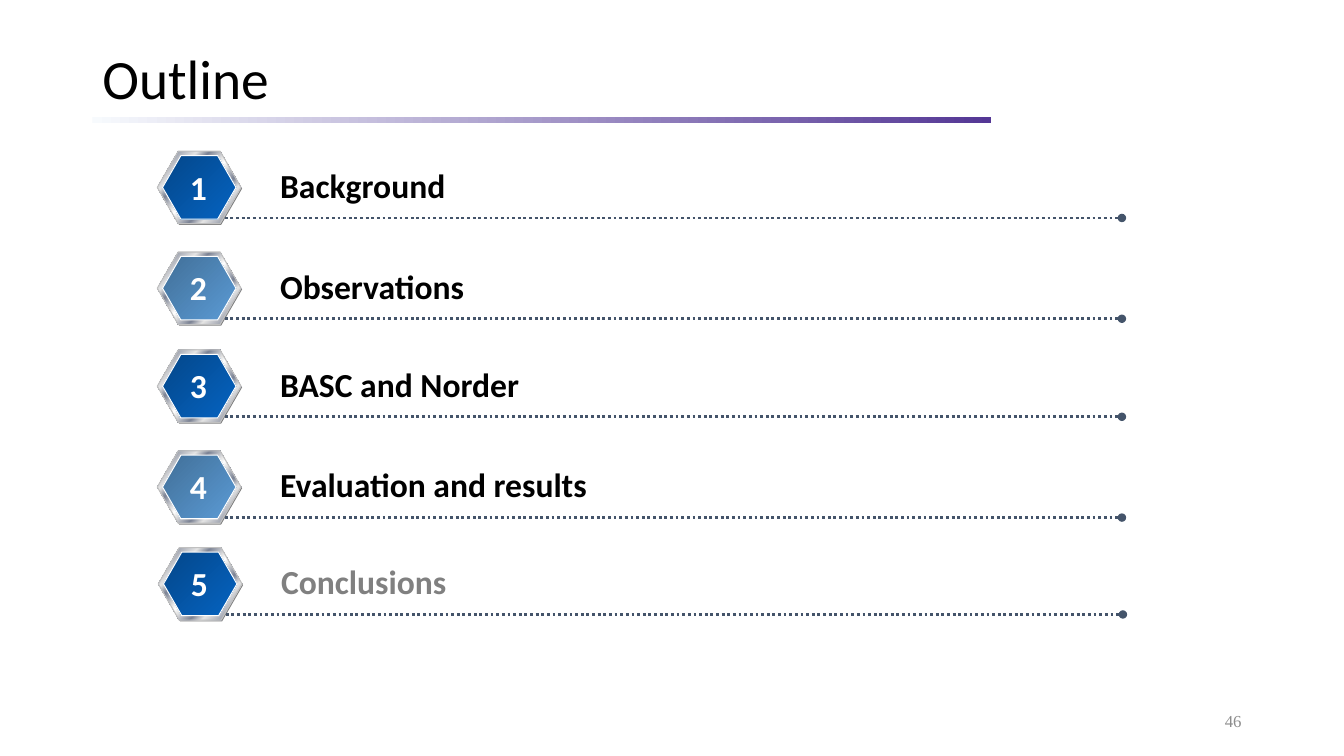
from lxml import etree
from pptx import Presentation
from pptx import util as u
from pptx.dml.color import RGBColor
from pptx.enum import dml, shapes, text
from pptx.oxml import parse_xml
from pptx.oxml.ns import nsdecls, qn

NAVY = [(0, "04478A"), (100, "0563C1")]
STEEL = [(0, "416F98"), (100, "5B9BD5")]
METAL = [(0, "E6E6E6"), (7, "7D8496"), (26, "E6E6E6"), (34, "7D8496"),
         (46, "E6E6E6"), (50, "FFFFFF"), (54, "E6E6E6"), (66, "7D8496"),
         (74, "E6E6E6"), (93, "7D8496"), (100, "E6E6E6")]
ITEMS = [
    ("Background", 112.4, 108, "000000"),
    ("Observations", 112.4, 180, "000000"),
    ("BASC and Norder", 112.4, 250, "000000"),
    ("Evaluation and results", 112.4, 322, "000000"),
    ("Conclusions", 113.1, 391.2, "808080"),
]


def rgb(value):
    return RGBColor.from_string(value)


def box(*lengths):
    return [u.Pt(length) for length in lengths]


def paint_gradient(sp, stops, angle):
    marks = "".join(
        f'<a:gs pos="{pos * 1000}"><a:srgbClr val="{color}"/></a:gs>'
        for pos, color in stops)
    sp._element.spPr.insert(2, parse_xml(
        f'<a:gradFill {nsdecls("a")} rotWithShape="1"><a:gsLst>{marks}</a:gsLst>'
        f'<a:lin ang="{angle * 60000}" scaled="0"/></a:gradFill>'))


def add_preset(parent, kind, bounds, fill=None, stops=None, angle=0, line=None):
    sp = parent.add_shape(kind, *box(*bounds))
    sp.shadow.inherit = False
    if stops:
        paint_gradient(sp, stops, angle)
    else:
        sp.fill.solid()
        sp.fill.fore_color.rgb = rgb(fill)
    if line:
        sp.line.color.rgb = rgb(line)
        sp.line.width = u.Pt(0.75)
    else:
        sp.line.fill.background()
    return sp


def write(tf, content, size=24, font="Calibri", color="000000", bold=False,
          align=text.PP_ALIGN.LEFT, anchor=text.MSO_ANCHOR.TOP, wrap=False):
    tf.word_wrap = wrap
    tf.vertical_anchor = anchor
    p = tf.paragraphs[0]
    p.alignment = align
    r = p.add_run()
    r.text = content
    r.font.size = u.Pt(size)
    r.font.name = font
    r.font.bold = bold
    r.font.color.rgb = rgb(color)
    return p


def add_text(s, content, bounds, **style):
    write(s.shapes.add_textbox(*box(*bounds)).text_frame, content, **style)


def add_badge(s, left, top, stops):
    group = s.shapes.add_group_shape().shapes
    hexagon = shapes.MSO_SHAPE.HEXAGON
    layers = [
        add_preset(group, hexagon, (left + 0.7, top + 0.9, 59.8, 51.8), fill="808080"),
        add_preset(group, hexagon, (left, top, 59.8, 51.8),
                   stops=METAL, angle=45, line="C0C0C0"),
        add_preset(group, hexagon, (left + 3.7, top + 3.2, 52.5, 45.4),
                   stops=stops, angle=45, line="FFFFFF"),
    ]
    for sp in layers:
        sp.adjustments[0] = 0.289


def add_dotted_line(s, left, right, y):
    line = s.shapes.add_connector(shapes.MSO_CONNECTOR.STRAIGHT, *box(left, y, right, y))
    line.line.color.rgb = rgb("44546A")
    line.line.width = u.Pt(2)
    line.line.dash_style = dml.MSO_LINE.ROUND_DOT
    etree.SubElement(line.line._get_or_add_ln(), qn("a:tailEnd"), type="oval")
    etree.SubElement(line._element.spPr, qn("a:effectLst"))


def add_item(s, number, label, left, top, color):
    add_badge(s, left, top, NAVY if number % 2 else STEEL)
    add_dotted_line(s, left + 48.2, left + 689, top + 47.7)
    add_text(s, label, (left + 80.6, top + 6.1, 264, 36), color=color, bold=True)
    add_text(s, str(number), (left + 15.3, top + 7.4, 28, 36.4),
             color="FFFFFF", bold=True, align=text.PP_ALIGN.CENTER)


def add_title(s, content):
    title = s.shapes.title
    title.left, title.top, title.width, title.height = box(66, 31, 828, 54)
    p = write(title.text_frame, content, size=39.6,
              anchor=text.MSO_ANCHOR.MIDDLE, wrap=True)
    p.line_spacing = 0.9


def main():
    prs = Presentation()
    prs.slide_width, prs.slide_height = box(960, 540)
    s = prs.slides.add_slide(prs.slide_layouts[5])
    add_title(s, "Outline")
    add_preset(s.shapes, shapes.MSO_SHAPE.RECTANGLE, (66, 83.8, 642, 4),
               stops=[(0, "F7FAFD"), (100, "543795")])
    for number, (label, left, top, color) in enumerate(ITEMS, 1):
        add_item(s, number, label, left, top, color)
    add_text(s, "46", (678, 500.5, 216, 28.75), size=12, font="Times New Roman",
             color="8C8C8C", align=text.PP_ALIGN.RIGHT,
             anchor=text.MSO_ANCHOR.MIDDLE, wrap=True)
    prs.save("out.pptx")


if __name__ == "__main__":
    main()
